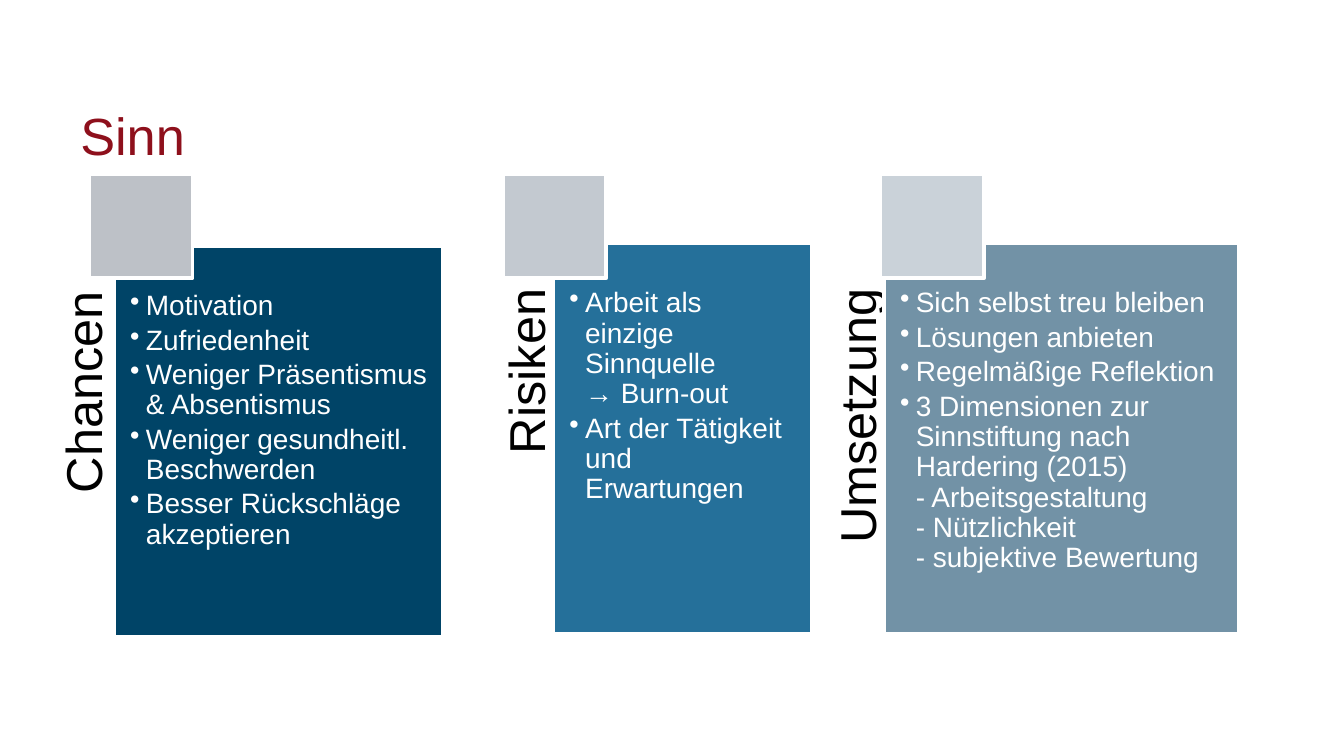
from dataclasses import dataclass

from lxml import etree
from pptx import Presentation
from pptx.dml.color import RGBColor
from pptx.enum.shapes import MSO_SHAPE
from pptx.enum.text import MSO_ANCHOR, PP_ALIGN
from pptx.oxml.ns import qn
from pptx.util import Cm, Pt

RECT = MSO_SHAPE.RECTANGLE
TOP = MSO_ANCHOR.TOP
LEFT = PP_ALIGN.LEFT
RIGHT = PP_ALIGN.RIGHT


@dataclass(frozen=True)
class Theme:
    font: str = "Arial"
    title: str = "8E101C"
    label: str = "000000"
    white: str = "FFFFFF"
    title_size: float = 28
    label_size: float = 27
    body_size: float = 15
    line: float = 2
    spacing: float = 0.9


@dataclass(frozen=True)
class Column:
    name: str
    items: tuple[str, ...]
    left: float
    top: float
    width: float
    label_mid: float
    chip_left: float
    fill: str
    chip_fill: str


THEME = Theme()
PANEL_H = 7.39
LABEL_H = 1.0
CHIP = 1.96
CHIP_TOP = 3.3
INDENT = Cm(0.3)

COLUMNS = (
    Column("Chancen",
           ("Motivation", "Zufriedenheit", "Weniger Präsentismus & Absentismus",
            "Weniger gesundheitl. Beschwerden", "Besser Rückschläge akzeptieren"),
           2.16, 4.65, 6.22, 1.61, 1.68, "004467", "BDC1C7"),
    Column("Risiken",
           ("Arbeit als einzige Sinnquelle \v→ Burn-out",
            "Art der Tätigkeit und Erwartungen"),
           10.46, 4.6, 4.88, 9.99, 9.5, "25709A", "C3C9D0"),
    Column("Umsetzung",
           ("Sich selbst treu bleiben", "Lösungen anbieten", "Regelmäßige Reflektion",
            "3 Dimensionen zur Sinnstiftung nach Hardering (2015)"
            "\v- Arbeitsgestaltung\v- Nützlichkeit\v- subjektive Bewertung"),
           16.71, 4.6, 6.71, 16.24, 16.64, "7292A6", "CAD2D9"),
)


def set_frame(frame, left: float, top: float, right: float, bottom: float) -> None:
    frame.word_wrap = True
    frame.vertical_anchor = TOP
    frame.margin_left, frame.margin_top = Cm(left), Cm(top)
    frame.margin_right, frame.margin_bottom = Cm(right), Cm(bottom)


def style(par, size: float, color: str) -> None:
    for run in par.runs:
        run.font.name = THEME.font
        run.font.size = Pt(size)
        run.font.color.rgb = RGBColor.from_string(color)


def add_bullet(par) -> None:
    props = par._p.get_or_add_pPr()
    props.set("marL", str(INDENT))
    props.set("indent", str(-INDENT))
    etree.SubElement(props, qn("a:buChar")).set("char", "•")


def add_box(shapes, left: float, top: float, width: float, height: float, fill: str):
    box = shapes.add_shape(RECT, Cm(left), Cm(top), Cm(width), Cm(height))
    box.shadow.inherit = False
    box.fill.solid()
    box.fill.fore_color.rgb = RGBColor.from_string(fill)
    box.line.color.rgb = RGBColor.from_string(THEME.white)
    box.line.width = Pt(THEME.line)
    return box


def add_title(shapes, text: str) -> None:
    box = shapes.add_textbox(Cm(1.27), Cm(1.7), Cm(16.97), Cm(2.9))
    set_frame(box.text_frame, 0.25, 0.25, 0.25, 0.13)
    box.text_frame.text = text
    style(box.text_frame.paragraphs[0], THEME.title_size, THEME.title)


def add_label(shapes, col: Column) -> None:
    mid = col.top + PANEL_H / 2
    box = shapes.add_textbox(Cm(col.label_mid - PANEL_H / 2), Cm(mid - LABEL_H / 2),
                             Cm(PANEL_H), Cm(LABEL_H))
    box.rotation = 270
    set_frame(box.text_frame, 0, 0, 0.86, 0)
    box.text_frame.text = col.name
    par = box.text_frame.paragraphs[0]
    par.alignment = RIGHT
    par.line_spacing = THEME.spacing
    style(par, THEME.label_size, THEME.label)


def add_panel(shapes, col: Column) -> None:
    panel = add_box(shapes, col.left, col.top, col.width, PANEL_H, col.fill)
    frame = panel.text_frame
    set_frame(frame, 0.3, 0.86, 0.3, 0.3)
    frame.text = "\n".join(col.items)
    for par in frame.paragraphs:
        add_bullet(par)
        par.level = 1
        par.alignment = LEFT
        par.line_spacing = THEME.spacing
        par.space_after = Pt(THEME.body_size * 0.15)
        style(par, THEME.body_size, THEME.white)


def add_column(shapes, col: Column) -> None:
    group = shapes.add_group_shape().shapes
    add_label(group, col)
    add_panel(group, col)
    add_box(group, col.chip_left, CHIP_TOP, CHIP, CHIP, col.chip_fill)


def main() -> None:
    deck = Presentation()
    deck.slide_width, deck.slide_height = Cm(25.4), Cm(14.29)
    slide = deck.slides.add_slide(deck.slide_layouts[6])
    add_title(slide.shapes, "Sinn")
    for col in COLUMNS:
        add_column(slide.shapes, col)
    deck.save("out.pptx")


if __name__ == "__main__":
    main()
